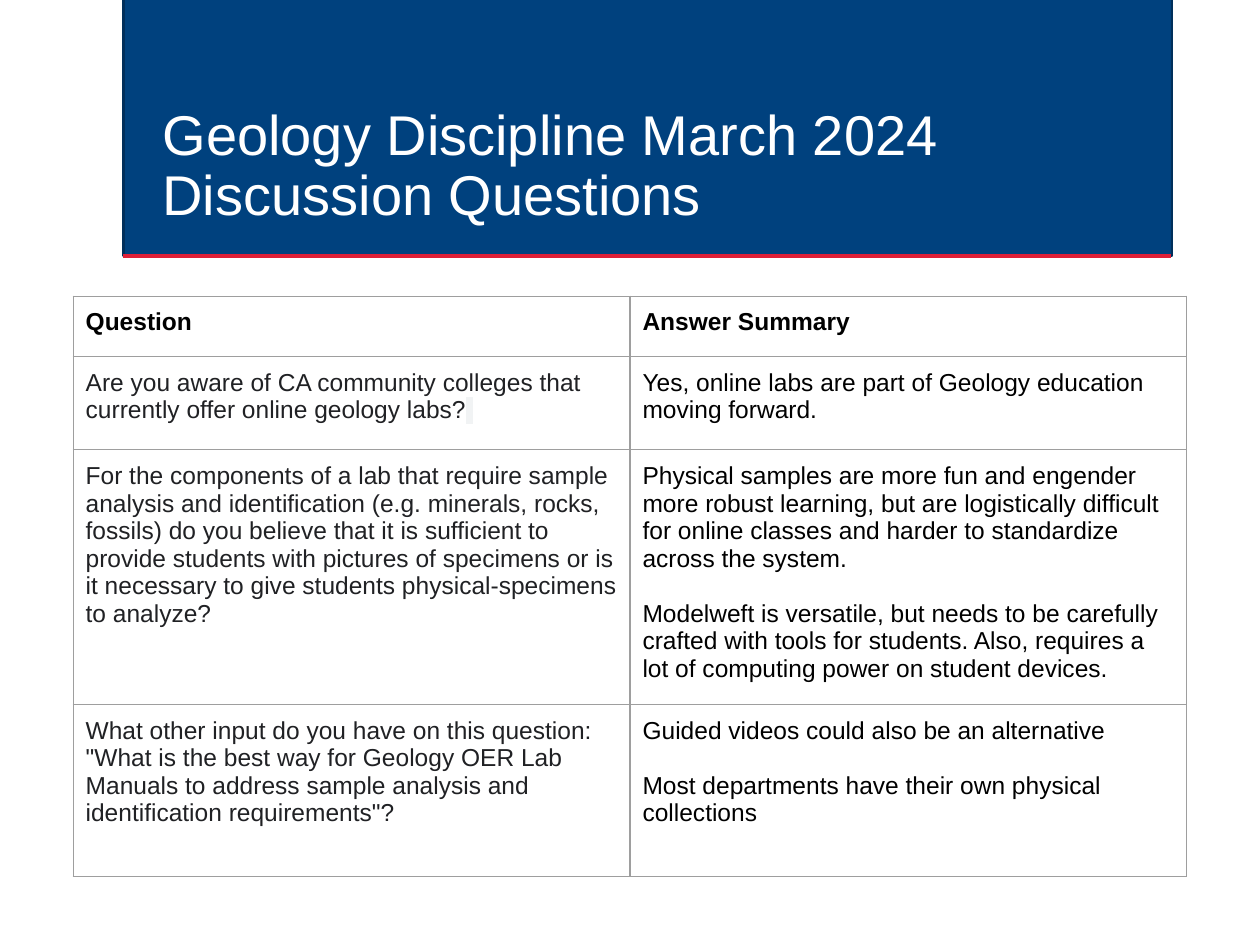
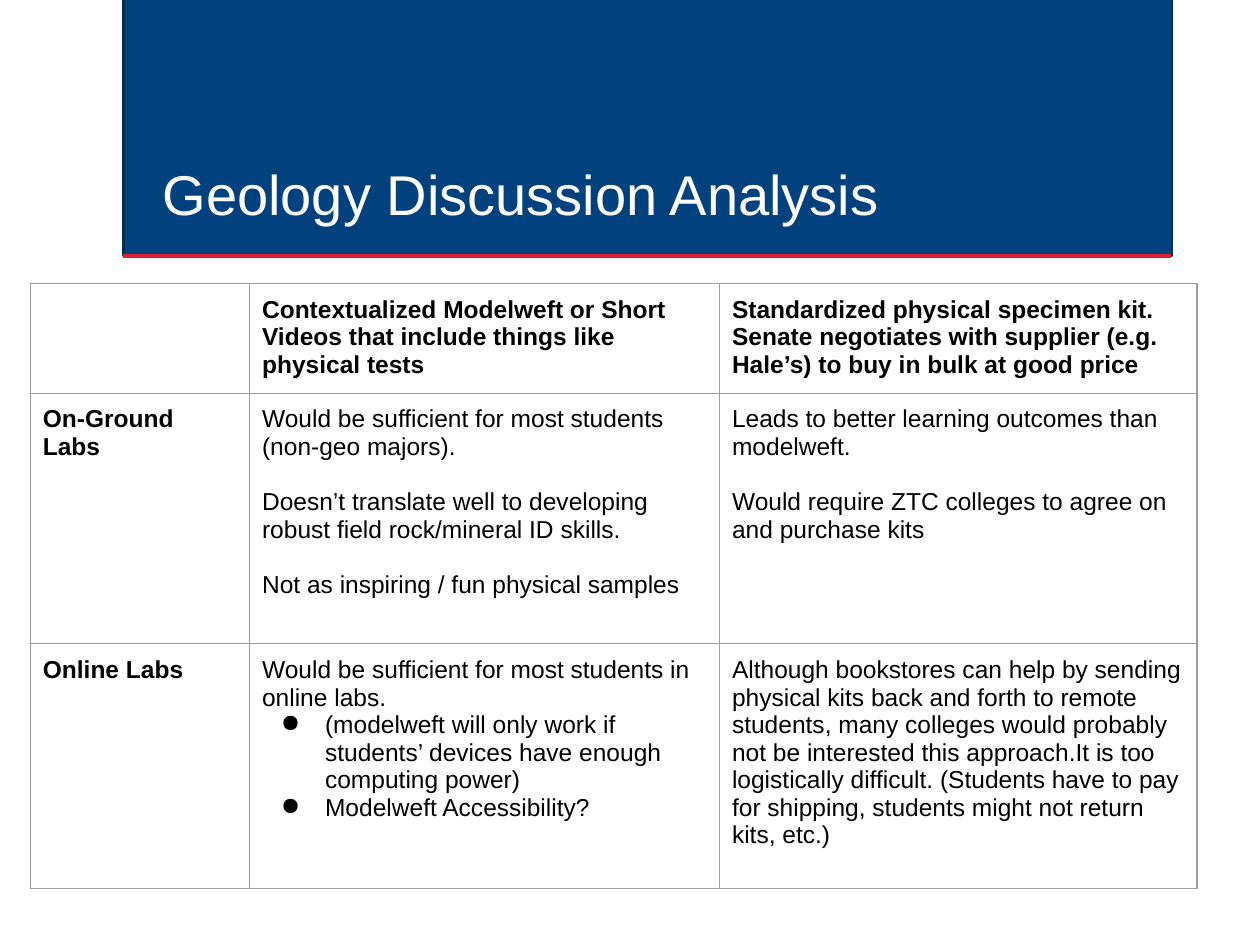
from lxml import etree
from pptx import Presentation
from pptx.dml.color import RGBColor
from pptx.enum.shapes import MSO_CONNECTOR, MSO_SHAPE
from pptx.enum.text import MSO_ANCHOR, MSO_AUTO_SIZE, PP_ALIGN
from pptx.oxml.ns import qn
from pptx.util import Inches, Pt

RECTANGLE = MSO_SHAPE.RECTANGLE
STRAIGHT = MSO_CONNECTOR.STRAIGHT
BOTTOM, TOP = MSO_ANCHOR.BOTTOM, MSO_ANCHOR.TOP
NO_FIT = MSO_AUTO_SIZE.NONE
LEFT = PP_ALIGN.LEFT

FONT = "Arial"
NAVY, NAVY_EDGE, RED = "00417E", "002F5B", "DE1F37"
WHITE, BLACK, CHARCOAL = "FFFFFF", "000000", "202124"
RULE_GREY, MARK_GREY = "9E9E9E", "F1F3F4"
TITLE_SIZE, CELL_SIZE, CELL_GAP = 32, 14, 15.7
BULLET = "● "
GRID_COLUMNS = 100
TITLE_ONLY = 5


def rgb(code):
    return RGBColor.from_string(code)


class Deck:
    """Holds the shared style and the current slide, measured on a square grid."""

    def __init__(self):
        self.show = Presentation()
        self.show.slide_width, self.show.slide_height = Inches(10), Inches(7.5)
        self.unit = self.show.slide_width / GRID_COLUMNS
        self.slide = None

    def grid(self, *steps):
        return [round(step * self.unit) for step in steps]

    def add_slide(self, heading):
        self.slide = self.show.slides.add_slide(self.show.slide_layouts[TITLE_ONLY])
        title = self.title(heading)
        for backdrop in (self.band(), self.underline()):
            title.element.addprevious(backdrop.element)

    def title(self, heading):
        title = self.slide.shapes.title
        title.left, title.top, title.width, title.height = self.grid(11.9, 8.8, 78.8, 9.8)
        frame = title.text_frame
        frame.auto_size, frame.vertical_anchor, frame.word_wrap = NO_FIT, BOTTOM, True
        line = frame.paragraphs[0]
        line.alignment, line.line_spacing = LEFT, 0.9
        self.run(line, heading, TITLE_SIZE, WHITE)
        return title

    def band(self):
        band = self.slide.shapes.add_shape(RECTANGLE, *self.grid(9.8, -0.2, 83.2, 20.5))
        band.shadow.inherit = False
        band.fill.solid()
        band.fill.fore_color.rgb = rgb(NAVY)
        band.line.color.rgb, band.line.width = rgb(NAVY_EDGE), Pt(1.25)
        return band

    def underline(self):
        rule = self.slide.shapes.add_connector(STRAIGHT, *self.grid(9.8, 20.3, 92.9, 20.3))
        rule.line.color.rgb, rule.line.width = rgb(RED), Pt(2.5)
        etree.SubElement(rule.element.spPr, qn("a:effectLst"))
        return rule

    def run(self, line, words, size=CELL_SIZE, color=BLACK, bold=False, mark=None):
        run = line.add_run()
        run.text = words
        font = run.font
        font.name, font.size, font.bold = FONT, Pt(size), bold
        font.color.rgb = rgb(color)
        if mark:
            highlight = etree.Element(qn("a:highlight"))
            etree.SubElement(highlight, qn("a:srgbClr"), val=mark)
            font.fill  # ensures the colour precedes the highlight
            run._r.rPr.find(qn("a:solidFill")).addnext(highlight)

    def table(self, left, top, widths, heights, rows, bold_columns=(), tinted_columns=()):
        area = self.grid(left, top, sum(widths), sum(heights))
        table = self.slide.shapes.add_table(len(rows), len(widths), *area).table
        table.first_row = table.horz_banding = False
        for column, width in zip(table.columns, self.grid(*widths)):
            column.width = width
        for row, height in zip(table.rows, self.grid(*heights)):
            row.height = height
        for r, row in enumerate(rows):
            for c, lines in enumerate(row):
                color = CHARCOAL if r and c in tinted_columns else BLACK
                self.cell(table.cell(r, c), lines, color, r == 0 or c in bold_columns)
        return table

    def cell(self, cell, lines, color, bold):
        cell.margin_left = cell.margin_right = cell.margin_top = cell.margin_bottom = Inches(0.1)
        cell.vertical_anchor = TOP
        cell.fill.background()
        self.borders(cell)
        frame = cell.text_frame
        for i, words in enumerate(lines):
            line = frame.add_paragraph() if i else frame.paragraphs[0]
            if words.startswith(BULLET):
                self.bullet(line)
            elif i:
                line.space_before = Pt(CELL_GAP)
            self.run(line, words.removeprefix(BULLET), color=color, bold=bold)

    def borders(self, cell):
        properties = cell._tc.get_or_add_tcPr()
        for i, side in enumerate("LRTB"):
            edge = etree.Element(qn(f"a:ln{side}"), w=str(Pt(0.75)))
            fill = etree.SubElement(edge, qn("a:solidFill"))
            etree.SubElement(fill, qn("a:srgbClr"), val=RULE_GREY)
            properties.insert(i, edge)

    def bullet(self, line):
        properties = line._p.get_or_add_pPr()
        properties.set("marL", str(Inches(0.5)))
        properties.set("indent", str(Inches(-0.35)))
        tint = etree.SubElement(properties, qn("a:buClr"))
        etree.SubElement(tint, qn("a:srgbClr"), val=BLACK)
        etree.SubElement(properties, qn("a:buChar"), char=BULLET.strip())


QUESTIONS = [
    (["Question"], ["Answer Summary"]),
    (["Are you aware of CA community colleges that currently offer online geology labs?"],
     ["Yes, online labs are part of Geology education moving forward."]),
    (["For the components of a lab that require sample analysis and identification "
      "(e.g. minerals, rocks, fossils) do you believe that it is sufficient to provide "
      "students with pictures of specimens or is it necessary to give students "
      "physical-specimens to analyze?"],
     ["Physical samples are more fun and engender more robust learning, but are "
      "logistically difficult for online classes and harder to standardize across the system.",
      "Modelweft is versatile, but needs to be carefully crafted with tools for students. "
      "Also, requires a lot of computing power on student devices."]),
    (["What other input do you have on this question: \"What is the best way for Geology "
      "OER Lab Manuals to address sample analysis and identification requirements\"?"],
     ["Guided videos could also be an alternative",
      "Most departments have their own physical collections"]),
]

ANALYSIS = [
    ([],
     ["Contextualized Modelweft or Short Videos that include things like physical tests"],
     ["Standardized physical specimen kit. Senate negotiates with supplier "
      "(e.g. Hale’s) to buy in bulk at good price"]),
    (["On-Ground Labs"],
     ["Would be sufficient for most students (non-geo majors).",
      "Doesn’t translate well to developing robust field rock/mineral ID skills.",
      "Not as inspiring / fun physical samples"],
     ["Leads to better learning outcomes than modelweft.",
      "Would require ZTC colleges to agree on and purchase kits"]),
    (["Online Labs"],
     ["Would be sufficient for most students in online labs.",
      BULLET + "(modelweft will only work if students’ devices have enough computing power)",
      BULLET + "Modelweft Accessibility?"],
     ["Although bookstores can help by sending physical kits back and forth to remote "
      "students, many colleges would probably not be interested this approach.It is too "
      "logistically difficult. (Students have to pay for shipping, students might not "
      "return kits, etc.)"]),
]


def main():
    deck = Deck()

    deck.add_slide("Geology Discipline March 2024 Discussion Questions")
    questions = deck.table(5.8, 23.5, [44.2] * 2, [4.8, 7.4, 20.2, 13.7], QUESTIONS,
                           tinted_columns=(0,))
    awareness = questions.cell(1, 0).text_frame.paragraphs[0]
    deck.run(awareness, " ", color=CHARCOAL, mark=MARK_GREY)

    deck.add_slide("Geology Discussion Analysis")
    deck.table(2.4, 22.5, [17.4, 37.3, 37.9], [8.7, 19.9, 19.4], ANALYSIS, bold_columns=(0,))

    deck.show.save("out.pptx")


if __name__ == "__main__":
    main()
